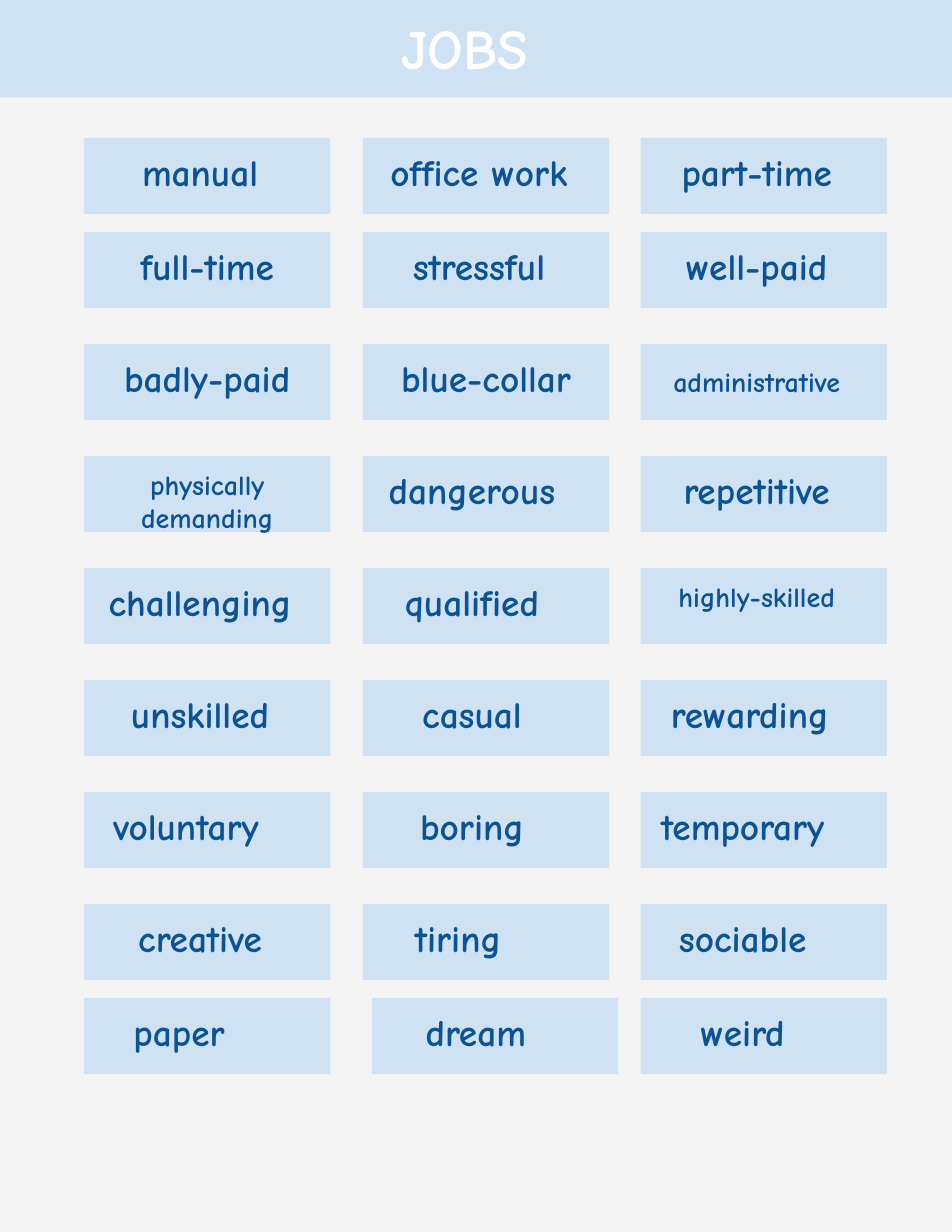
from pptx import Presentation
from pptx.dml.color import RGBColor
from pptx.enum.shapes import MSO_SHAPE as Shape
from pptx.enum.text import MSO_ANCHOR as Anchor, PP_ALIGN as Align
from pptx.util import Inches, Pt

PAPER = RGBColor(0xF3, 0xF3, 0xF3)
SKY = RGBColor(0xCF, 0xE2, 0xF3)
NAVY = RGBColor(0x0B, 0x53, 0x94)
WHITE = RGBColor(0xFF, 0xFF, 0xFF)

COLUMNS = [0.75, 3.24, 5.72]
ROWS = [1.23, 2.07] + [3.07 + step for step in range(6)] + [8.91]
CARD_SIZE = (2.2, 0.68)
NUDGE = 0.125  # extra right inset for each step a word sits left of centre

# Each word with its number of steps to the left
WORDS = [
    [("manual", 1), ("office work", 1), ("part-time", 1)],
    [("full-time", 0), ("stressful", 1), ("well-paid", 1)],
    [("badly-paid", 0), ("blue-collar", 0), ("administrative", 1)],
    [("physically demanding", 0), ("dangerous", 2), ("repetitive", 1)],
    [("challenging", 1), ("qualified", 2), ("highly-skilled", 1)],
    [("unskilled", 1), ("casual", 2), ("rewarding", 2)],
    [("voluntary", 3), ("boring", 2), ("temporary", 3)],
    [("creative", 1), ("tiring", 4), ("sociable", 3)],
    [("paper", 4), ("dream", 0), ("weird", 3)],
]
SMALL_WORDS = {"administrative", "physically demanding", "highly-skilled"}
# Cards that depart from the common layout
SPECIAL = {
    "administrative": {"inset_top": 0.18},
    "dream": {"offset": 0.08, "inset_left": 0.48, "align": Align.LEFT},
}


class Sheet:
    """Holds the lettering style and the current page."""

    def __init__(self, page, font="Comic Neue"):
        self.page = page
        self.font = font

    def background(self, color):
        fill = self.page.background.fill
        fill.solid()
        fill.fore_color.rgb = color

    def box(self, left, top, width, height):
        box = self.page.shapes.add_shape(
            Shape.RECTANGLE, Inches(left), Inches(top), Inches(width), Inches(height))
        box.shadow.inherit = False
        box.fill.solid()
        box.fill.fore_color.rgb = SKY
        box.line.fill.background()
        return box

    def label(self, box, text, size, color, inset_left=0.1, inset_top=0.1,
              inset_right=0.1, align=Align.CENTER):
        frame = box.text_frame
        frame.word_wrap = True
        frame.vertical_anchor = Anchor.TOP
        frame.margin_left, frame.margin_right = Inches(inset_left), Inches(inset_right)
        frame.margin_top, frame.margin_bottom = Inches(inset_top), Inches(0.1)
        frame.text = text
        para = frame.paragraphs[0]
        para.alignment = align
        font = para.runs[0].font
        font.name, font.size, font.bold = self.font, Pt(size), True
        font.color.rgb = color

    def card(self, left, top, word, steps, offset=0, **layout):
        size = 18 if word in SMALL_WORDS else 24
        box = self.box(left + offset, top, *CARD_SIZE)
        self.label(box, word, size, NAVY, inset_right=0.1 + NUDGE * steps, **layout)


def main():
    deck = Presentation()
    deck.slide_width, deck.slide_height = Inches(8.5), Inches(11)
    sheet = Sheet(deck.slides.add_slide(deck.slide_layouts[6]))
    sheet.background(PAPER)

    # Title band
    band = sheet.box(0, -0.02, 8.5, 0.89)
    sheet.label(band, "JOBS", 36, WHITE, inset_top=0.14, inset_right=0.3)

    # Word cards
    for top, words in zip(ROWS, WORDS):
        for left, (word, steps) in zip(COLUMNS, words):
            sheet.card(left, top, word, steps, **SPECIAL.get(word, {}))

    deck.save("out.pptx")


if __name__ == "__main__":
    main()
